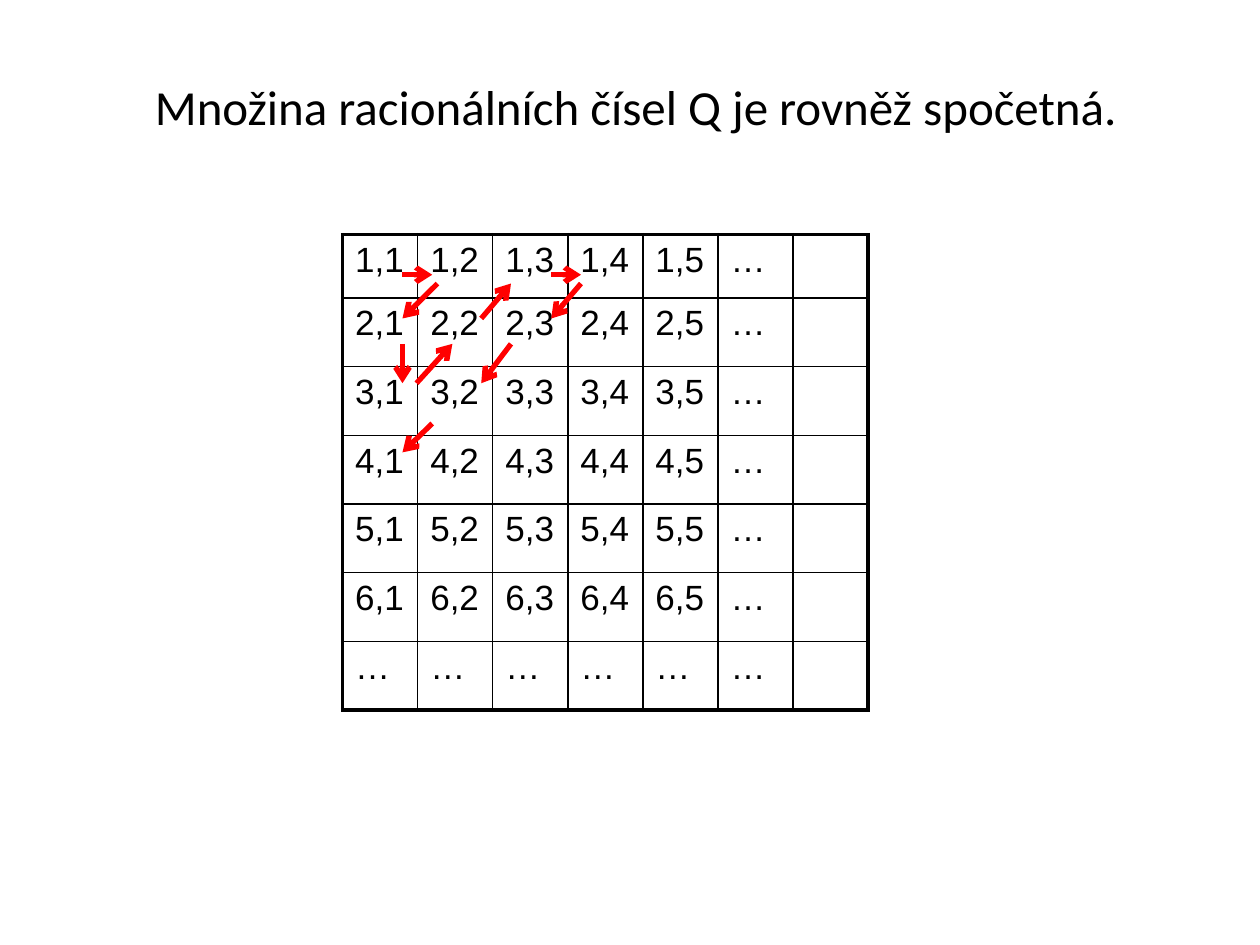
from pptx import Presentation
from pptx.dml.color import RGBColor
from pptx.enum.shapes import MSO_CONNECTOR
from pptx.enum.text import MSO_ANCHOR, PP_ALIGN
from pptx.oxml.ns import qn
from pptx.util import Pt
from lxml.etree import SubElement

STRAIGHT = MSO_CONNECTOR.STRAIGHT
MIDDLE = MSO_ANCHOR.MIDDLE
CENTER = PP_ALIGN.CENTER

BLACK = "000000"
RED = "FF0000"
THIN, THICK = 1, 2.25

TABLE_LEFT, TABLE_TOP = 195.8, 134
COLUMN_WIDTH = 42.9
FIRST_ROW_HEIGHT, ROW_HEIGHT = 36.2, 39.27

# Each step of the diagonal walk through the pairs: x and y of start and end
WALK = [
    (230, 157, 247, 157),
    (250, 162, 230, 182),
    (230, 196.5, 230, 219),
    (238, 219, 258.5, 196.5),
    (275, 182, 292, 162),
    (315, 157, 332, 157),
    (332, 162, 315, 182),
    (292, 196.5, 275, 219),
    (247, 242, 230, 258.5),
]


def color(hex_string):
    return RGBColor.from_string(hex_string)


def add_run(paragraph, text, font_name, size):
    run = paragraph.add_run()
    run.text = text
    run.font.name = font_name
    run.font.size = Pt(size)
    run.font.color.rgb = color(BLACK)


def add_title(slide, text):
    title = slide.shapes.add_textbox(Pt(42.5), Pt(37.5), Pt(641.5), Pt(45.5))
    frame = title.text_frame
    frame.word_wrap = True
    frame.vertical_anchor = MIDDLE
    paragraph = frame.paragraphs[0]
    paragraph.alignment = CENTER
    add_run(paragraph, text, "Calibri", 28)


def set_borders(cell, widths):
    """Draw the cell's borders; widths are for left, right, top and bottom."""
    properties = cell._tc.get_or_add_tcPr()
    for side, width in zip("LRTB", widths):
        border = SubElement(properties, qn(f"a:ln{side}"), w=str(Pt(width)))
        fill = SubElement(border, qn("a:solidFill"))
        SubElement(fill, qn("a:srgbClr"), val=BLACK)


def add_pair_table(slide, rows):
    row_count, column_count = len(rows), len(rows[0])
    heights = [FIRST_ROW_HEIGHT] + [ROW_HEIGHT] * (row_count - 1)
    table = slide.shapes.add_table(
        row_count, column_count, Pt(TABLE_LEFT), Pt(TABLE_TOP),
        Pt(COLUMN_WIDTH * column_count), Pt(sum(heights))).table
    table.first_row = False
    table.horz_banding = False
    for column in table.columns:
        column.width = Pt(COLUMN_WIDTH)
    for row, height in zip(table.rows, heights):
        row.height = Pt(height)

    for r, row in enumerate(rows):
        for c, text in enumerate(row):
            cell = table.cell(r, c)
            on_edge = (c == 0, c == column_count - 1,
                       r == 0, r == row_count - 1)
            set_borders(cell, [THICK if edge else THIN for edge in on_edge])
            cell.fill.background()
            if text:
                add_run(cell.text_frame.paragraphs[0], text, "Arial", 20)


def add_arrow(slide, ends):
    arrow = slide.shapes.add_connector(STRAIGHT, *map(Pt, ends))
    arrow.line.color.rgb = color(RED)
    arrow.line.width = Pt(3)
    SubElement(arrow.line._get_or_add_ln(), qn("a:tailEnd"), type="arrow")
    SubElement(arrow._element.spPr, qn("a:effectLst"))


def main():
    presentation = Presentation()
    presentation.slide_width = Pt(720)
    presentation.slide_height = Pt(540)
    slide = presentation.slides.add_slide(presentation.slide_layouts[6])

    add_title(slide, "Množina racionálních čísel Q je rovněž spočetná.")
    pairs = [[f"{i},{j}" for j in range(1, 6)] + ["…", ""]
             for i in range(1, 7)]
    add_pair_table(slide, pairs + [["…"] * 6 + [""]])
    for step in WALK:
        add_arrow(slide, step)

    presentation.save("out.pptx")


if __name__ == "__main__":
    main()
